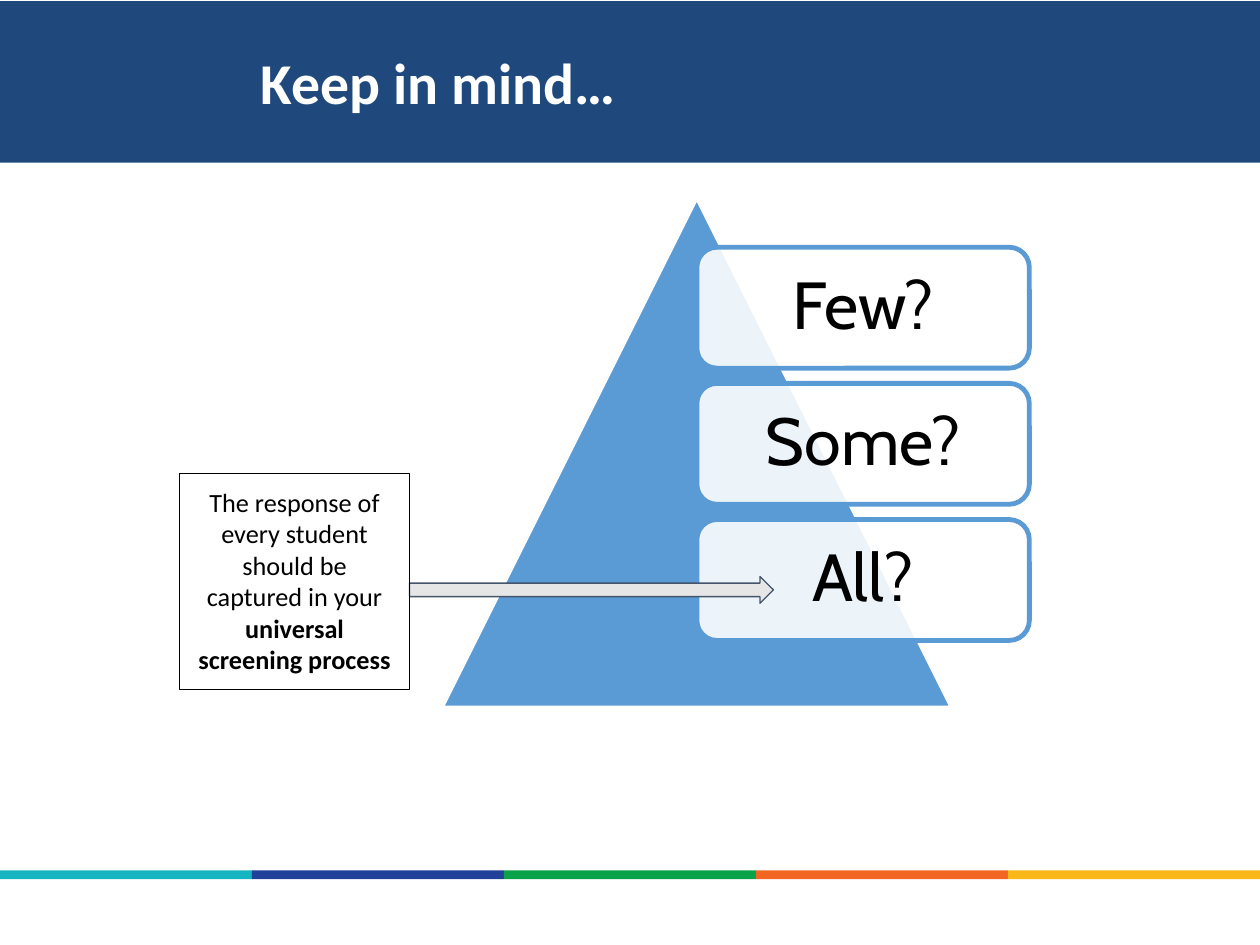
from dataclasses import dataclass

from pptx import Presentation
from pptx.dml.color import RGBColor
from pptx.enum.shapes import MSO_SHAPE
from pptx.enum.text import MSO_ANCHOR, PP_ALIGN
from pptx.oxml.ns import qn
from pptx.util import Pt
from lxml import etree

RECT = MSO_SHAPE.RECTANGLE
ROUND = MSO_SHAPE.ROUNDED_RECTANGLE
PEAK = MSO_SHAPE.ISOSCELES_TRIANGLE
ARROW = MSO_SHAPE.RIGHT_ARROW
TOP, MIDDLE = MSO_ANCHOR.TOP, MSO_ANCHOR.MIDDLE
LEFT, CENTER = PP_ALIGN.LEFT, PP_ALIGN.CENTER


@dataclass(frozen=True)
class Theme:
    white: str = "FFFFFF"
    black: str = "000000"
    navy: str = "1F497D"
    blue: str = "5B9BD5"
    gray: str = "E7E6E6"
    slate: str = "44546A"
    stripes: tuple = ("14B4C0", "20409A", "0BA14B", "F26522", "F9B817")
    body: str = "Calibri"
    label: str = "Cabin"
    title_size: float = 33
    label_size: float = 38
    note_size: float = 15
    thick: float = 2.75
    thin: float = 0.75


class Page:
    def __init__(self, deck, theme):
        self.theme = theme
        self.slide = deck.slides.add_slide(deck.slide_layouts[6])

    def shape(self, kind, box, fill=None, line=None, width=0, alpha=None):
        """Add a preset shape; alpha is the fill's opacity in percent."""
        item = self.slide.shapes.add_shape(kind, *map(Pt, box))
        item.shadow.inherit = False
        if fill:
            item.fill.solid()
            item.fill.fore_color.rgb = RGBColor.from_string(fill)
        else:
            item.fill.background()
        if alpha:
            color = item.fill._xPr.find(f".//{qn('a:srgbClr')}")
            etree.SubElement(color, qn("a:alpha"), val=str(alpha * 1000))
        if line:
            item.line.color.rgb = RGBColor.from_string(line)
            item.line.width = Pt(width)
        else:
            item.line.fill.background()
        return item

    def text(self, item, runs, font, size, color, align=CENTER,
             anchor=MIDDLE, inset=(7.2,) * 4, space=None):
        """Fill a shape with one paragraph of (words, bold) runs."""
        frame = item.text_frame
        left, top, right, low = map(Pt, inset)
        values = {"word_wrap": True, "vertical_anchor": anchor,
                  "margin_left": left, "margin_top": top,
                  "margin_right": right, "margin_bottom": low}
        for name, value in values.items():
            setattr(frame, name, value)
        para = frame.paragraphs[0]
        para.alignment = align
        para.line_spacing = space
        for words, bold in runs:
            run = para.add_run()
            run.text = words
            for name, value in {"name": font, "size": Pt(size), "bold": bold}.items():
                setattr(run.font, name, value)
            run.font.color.rgb = RGBColor.from_string(color)

    def title(self, words):
        look = self.theme
        box = self.slide.shapes.add_textbox(*map(Pt, (144, -0.7, 576, 92.9)))
        self.text(box, [(words, True)], look.body, look.title_size, look.white,
                  LEFT, TOP, (5, 32, 5, 3), 0.89)

    def stripe(self, width, height, top):
        step = width / len(self.theme.stripes)
        for i, color in enumerate(self.theme.stripes):
            self.shape(RECT, (i * step, top, step, height), color)

    def tier(self, words, box):
        look = self.theme
        card = self.shape(ROUND, box, look.white, look.blue, look.thick, 89)
        self.text(card, [(words, False)], look.label, look.label_size,
                  look.black, space=0.9)

    def note(self, runs, box):
        look = self.theme
        card = self.shape(RECT, box, None, look.black, look.thin)
        self.text(card, runs, look.body, look.note_size, look.black, anchor=TOP)


def main():
    deck = Presentation()
    deck.slide_width, deck.slide_height = Pt(720), Pt(540)
    look = Theme()
    page = Page(deck, look)

    page.shape(RECT, (0, 0.7, 720, 92.2), look.navy)
    page.stripe(720, 5, 497.4)
    page.title("Keep in mind…")

    page.shape(PEAK, (252, 112.3, 292.3, 292.3), look.blue, look.white, look.thick)
    for i, words in enumerate(("Few?", "Some?", "All?")):
        page.tier(words, (398.2, 141.3 + i * 77.8, 190, 69.1))

    page.shape(ARROW, (234, 329.4, 208, 15.4), look.gray, look.slate, look.thin)
    page.note([("The response of every student should be captured in your ", False),
               ("universal screening process", True)], (102.7, 270.6, 131.3, 123.5))
    deck.save("out.pptx")


if __name__ == "__main__":
    main()
